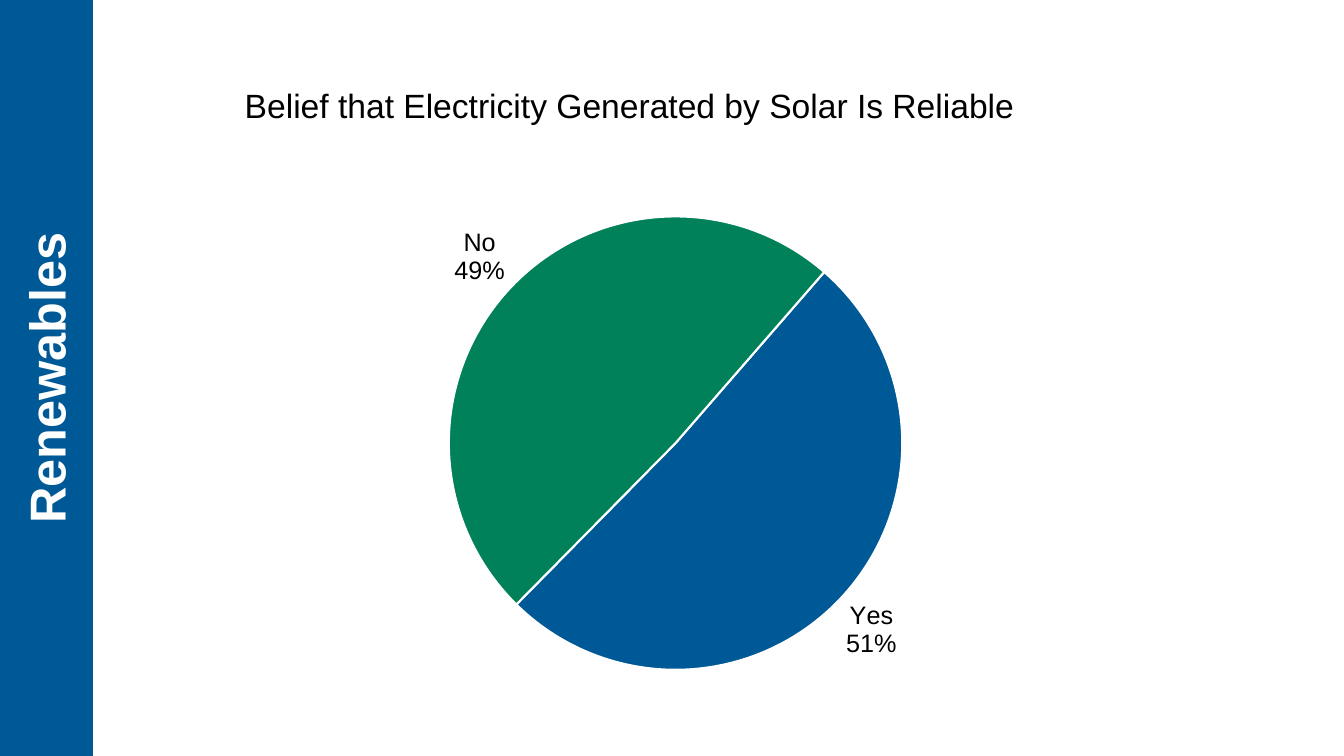
from lxml import etree
from pptx import Presentation
from pptx.chart.data import CategoryChartData
from pptx.dml.color import RGBColor
from pptx.enum.chart import XL_CHART_TYPE, XL_LABEL_POSITION
from pptx.enum.shapes import MSO_SHAPE
from pptx.enum.text import MSO_ANCHOR, PP_ALIGN
from pptx.oxml.ns import qn
from pptx.util import Pt

TITLE = "Belief that Electricity Generated by Solar Is Reliable"
SECTION = "Renewables"
ANSWERS = {"Yes": 0.51, "No": 0.49}

THEME = {
    "font": "Arial",
    "title_size": Pt(24), "section_size": Pt(36), "label_size": Pt(18),
    "text": RGBColor(0, 0, 0),
    "white": RGBColor(0xFF, 0xFF, 0xFF),
    "blue": RGBColor(0x00, 0x59, 0x97),
    "green": RGBColor(0x00, 0x81, 0x5A),
}
SLICE_COLORS = (THEME["blue"], THEME["green"])

SLIDE_WIDTH, SLIDE_HEIGHT, BAND_WIDTH = 1344, 756, 93
TITLE_BOX = (118, 80, 1023, 50)
CHART_BOX = (253, 182, 805, 574)
PLOT_AREA = {"x": 0.22, "y": 0.06, "w": 0.61, "h": 0.79}
START_ANGLE = 41

PIE = XL_CHART_TYPE.PIE
OUTSIDE = XL_LABEL_POSITION.OUTSIDE_END
RECTANGLE = MSO_SHAPE.RECTANGLE
MIDDLE = MSO_ANCHOR.MIDDLE
CENTER = PP_ALIGN.CENTER


def px(length):
    return round(length * 914400 / 100.8)


def px_box(box):
    return [px(length) for length in box]


def style_font(font, size, color, bold=False):
    font.name, font.size, font.bold = THEME["font"], size, bold
    font.color.rgb = color


def write_centered(frame, text, size, color, bold=False):
    frame.word_wrap = True
    para = frame.paragraphs[0]
    para.text = text
    para.alignment = CENTER
    style_font(para.font, size, color, bold)


def add_title(page):
    box = page.shapes.add_textbox(*px_box(TITLE_BOX))
    write_centered(box.text_frame, TITLE, THEME["title_size"], THEME["text"])


def place_plot(chart):
    """Fix the inner plot area and the angle of the first slice."""
    area = chart._chartSpace.find(".//" + qn("c:plotArea"))
    for old in area.findall(qn("c:layout")):
        area.remove(old)
    layout = etree.Element(qn("c:layout"))
    area.insert(0, layout)
    manual = etree.SubElement(layout, qn("c:manualLayout"))
    settings = {"layoutTarget": "inner", "xMode": "edge", "yMode": "edge", **PLOT_AREA}
    for name, value in settings.items():
        etree.SubElement(manual, qn("c:" + name), val=str(value))

    pie = area.find(qn("c:pieChart"))
    for old in pie.findall(qn("c:firstSliceAng")):
        pie.remove(old)
    etree.SubElement(pie, qn("c:firstSliceAng"), val=str(START_ANGLE))


def label_slices(series):
    labels = series.data_labels
    labels.number_format, labels.number_format_is_linked = "0%", False
    labels.position = OUTSIDE
    labels.show_category_name = labels.show_value = True
    style_font(labels.font, THEME["label_size"], THEME["text"])
    separator = etree.Element(qn("c:separator"))
    separator.text = "\n"
    labels._element.find(qn("c:showBubbleSize")).addnext(separator)


def add_pie(page):
    data = CategoryChartData(number_format="0%")
    data.categories = list(ANSWERS)
    data.add_series("Series 1", list(ANSWERS.values()))
    chart = page.shapes.add_chart(PIE, *px_box(CHART_BOX), data).chart
    chart.has_title = chart.has_legend = False
    style_font(chart.font, THEME["label_size"], THEME["text"])
    plot = chart.plots[0]
    plot.vary_by_categories = True
    series = plot.series[0]
    for index, color in enumerate(SLICE_COLORS):
        look = series.points[index].format
        look.fill.solid()
        look.fill.fore_color.rgb = color
        look.line.color.rgb = THEME["white"]
        look.line.width = Pt(1.5)
    label_slices(series)
    place_plot(chart)


def add_section_band(page):
    """Add a wide bar and turn it about its centre onto the left edge."""
    left = (BAND_WIDTH - SLIDE_HEIGHT) / 2
    band = page.shapes.add_shape(
        RECTANGLE, *px_box((left, -left, SLIDE_HEIGHT, BAND_WIDTH)))
    band.rotation = 270
    band.shadow.inherit = False
    band.fill.solid()
    band.fill.fore_color.rgb = THEME["blue"]
    band.line.fill.background()
    frame = band.text_frame
    frame.vertical_anchor = MIDDLE
    frame.margin_top, frame.margin_bottom = 0, px(2)
    write_centered(frame, SECTION, THEME["section_size"], THEME["white"], bold=True)


def main():
    deck = Presentation()
    deck.slide_width, deck.slide_height = px(SLIDE_WIDTH), px(SLIDE_HEIGHT)
    page = deck.slides.add_slide(deck.slide_layouts[6])
    add_title(page)
    add_pie(page)
    add_section_band(page)
    deck.save("out.pptx")


if __name__ == "__main__":
    main()
